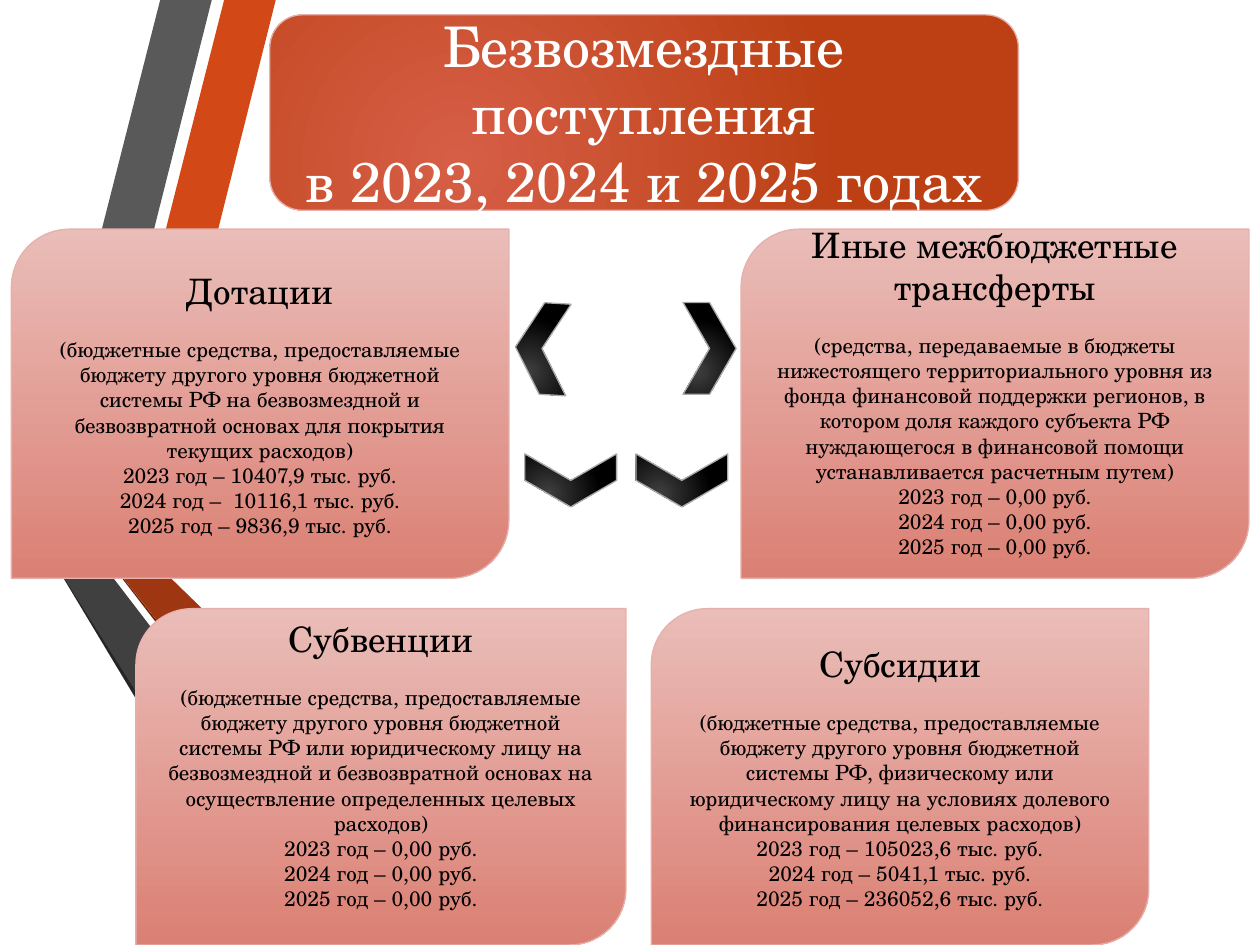
from dataclasses import dataclass

from lxml import etree
from pptx import Presentation
from pptx.dml.color import RGBColor
from pptx.enum.shapes import MSO_SHAPE
from pptx.enum.text import MSO_ANCHOR, PP_ALIGN
from pptx.oxml.ns import qn
from pptx.shapes.autoshape import Shape
from pptx.slide import Slide
from pptx.util import Cm, Pt


@dataclass(frozen=True)
class Theme:
    font: str = "TeX Gyre Schola"
    title_size: int = 32
    heading_size: int = 20
    body_size: int = 12
    blank_line: float = 14.4
    outline_width: float = 0.75
    title_text: str = "FFFFFF"
    card_text: str = "000000"
    title_fill: tuple[str, str] = ("D65E46", "BC4014")
    card_fill: tuple[str, str] = ("EABDB8", "DB8074")
    chevron_fill: tuple[str, str] = ("404040", "000000")
    panel_outline: str = "E6B1AC"
    chevron_outline: str = "ABABAB"
    orange: str = "D34817"
    orange_shade: str = "9E3611"
    orange_edge: str = "69240C"
    grey: str = "595959"
    grey_shade: str = "404040"
    grey_edge: str = "262626"


@dataclass(frozen=True)
class Box:
    left: float
    top: float
    width: float
    height: float


@dataclass(frozen=True)
class Ribbon:
    color: str
    points: tuple[tuple[float, float], ...]


@dataclass(frozen=True)
class Card:
    box: Box
    heading: str
    meaning: str
    amounts: tuple[str, str, str]
    raised: bool = False


@dataclass(frozen=True)
class Chevron:
    left: float
    top: float
    rotation: float


THEME = Theme()
SLIDE_WIDTH, SLIDE_HEIGHT = 25.4, 19.05
UPPER_TOP, UPPER_HEIGHT = 4.62, 7.04
LOWER_TOP, LOWER_HEIGHT = 12.27, 6.78
CHEVRON_WIDTH, CHEVRON_HEIGHT = 1.07, 1.85
SIDE_TOP, DOWN_TOP = 6.1, 8.76
NO_MONEY = "0,00 руб."

TITLE_BOX = Box(5.44, 0.3, 15.09, 3.94)
TITLE = ("Безвозмездные поступления", "в 2023, 2024 и 2025 годах")

RIBBONS = (
    Ribbon(THEME.orange, ((1.78, 10.77), (2.79, 11.02), (5.56, 0), (4.52, 0))),
    Ribbon(THEME.grey, ((4.27, 0), (3.23, 0), (0.56, 10.49), (1.57, 10.72))),
    Ribbon(THEME.grey_edge, ((0.58, 10.49), (5.72, SLIDE_HEIGHT), (5.97, SLIDE_HEIGHT))),
    Ribbon(THEME.orange_edge, ((8.38, SLIDE_HEIGHT), (1.8, 10.8), (8.15, SLIDE_HEIGHT))),
    Ribbon(THEME.orange_shade, ((1.78, 10.77), (8.38, SLIDE_HEIGHT),
                                (11.05, SLIDE_HEIGHT), (2.79, 11.02))),
    Ribbon(THEME.grey_shade, ((7.95, SLIDE_HEIGHT), (1.57, 10.72),
                              (0.56, 10.49), (5.97, SLIDE_HEIGHT))),
)

CARDS = (
    Card(Box(0.23, UPPER_TOP, 10.03, UPPER_HEIGHT), "Дотации",
         "(бюджетные средства, предоставляемые бюджету другого уровня бюджетной системы РФ "
         "на безвозмездной и безвозвратной основах для покрытия текущих расходов)",
         ("10407,9 тыс. руб.", " 10116,1 тыс. руб.", "9836,9 тыс. руб.")),
    Card(Box(2.74, LOWER_TOP, 9.88, LOWER_HEIGHT), "Субвенции",
         "(бюджетные средства, предоставляемые бюджету другого уровня бюджетной системы РФ "
         "или юридическому лицу на безвозмездной и безвозвратной основах на осуществление "
         "определенных целевых расходов)",
         (NO_MONEY, NO_MONEY, NO_MONEY), raised=True),
    Card(Box(13.13, LOWER_TOP, 10.03, LOWER_HEIGHT), "Субсидии",
         "(бюджетные средства, предоставляемые бюджету другого уровня бюджетной системы РФ, "
         "физическому или юридическому лицу на условиях долевого финансирования целевых "
         "расходов)",
         ("105023,6 тыс. руб.", "5041,1 тыс. руб.", "236052,6 тыс. руб.")),
    Card(Box(14.94, UPPER_TOP, 10.24, UPPER_HEIGHT), "Иные межбюджетные трансферты",
         "(средства, передаваемые в бюджеты нижестоящего территориального уровня из фонда "
         "финансовой поддержки регионов, в котором доля каждого субъекта РФ нуждающегося "
         "в финансовой помощи устанавливается расчетным путем)",
         (NO_MONEY, NO_MONEY, NO_MONEY), raised=True),
)

CHEVRONS = (
    Chevron(13.77, SIDE_TOP, 0),
    Chevron(13.21, DOWN_TOP, 90),
    Chevron(10.97, DOWN_TOP, 90),
    Chevron(10.39, SIDE_TOP, 183.4),
)


def draw_ribbon(slide: Slide, ribbon: Ribbon) -> None:
    start, *rest = [(Cm(x), Cm(y)) for x, y in ribbon.points]
    builder = slide.shapes.build_freeform(*start)
    builder.add_line_segments(rest)
    band = builder.convert_to_shape()
    band.shadow.inherit = False
    band.fill.solid()
    band.fill.fore_color.rgb = RGBColor.from_string(ribbon.color)
    band.line.fill.background()


def draw_panel(slide: Slide, preset: MSO_SHAPE, box: Box, colors: tuple[str, str],
               outline: str, radial: bool) -> Shape:
    panel = slide.shapes.add_shape(
        preset, Cm(box.left), Cm(box.top), Cm(box.width), Cm(box.height))
    panel.shadow.inherit = False
    panel.line.color.rgb = RGBColor.from_string(outline)
    panel.line.width = Pt(THEME.outline_width)
    panel.fill.gradient()
    panel.fill.gradient_angle = 270
    for stop, color in zip(panel.fill.gradient_stops, colors):
        stop.color.rgb = RGBColor.from_string(color)
    if radial:
        gradient = panel._element.spPr.find(qn("a:gradFill"))
        linear = gradient.find(qn("a:lin"))
        circle = etree.Element(qn("a:path"), {"path": "circle"})
        etree.SubElement(circle, qn("a:fillToRect"),
                         {"l": "50000", "t": "100000", "r": "100000", "b": "50000"})
        gradient.replace(linear, circle)
    return panel


def write_lines(panel: Shape, lines: tuple[str, ...], sizes: list[int], color: str) -> None:
    frame = panel.text_frame
    frame.word_wrap = True
    frame.vertical_anchor = MSO_ANCHOR.MIDDLE
    frame.text = "\n".join(lines)
    for paragraph, size in zip(frame.paragraphs, sizes):
        paragraph.alignment = PP_ALIGN.CENTER
        paragraph.font.name = THEME.font
        paragraph.font.size = Pt(size)
        paragraph.font.color.rgb = RGBColor.from_string(color)


def draw_title(slide: Slide) -> None:
    banner = draw_panel(slide, MSO_SHAPE.ROUNDED_RECTANGLE, TITLE_BOX,
                        THEME.title_fill, THEME.panel_outline, radial=True)
    write_lines(banner, TITLE, [THEME.title_size] * len(TITLE), THEME.title_text)


def draw_card(slide: Slide, card: Card) -> None:
    panel = draw_panel(slide, MSO_SHAPE.ROUND_2_DIAG_RECTANGLE, card.box,
                       THEME.card_fill, THEME.panel_outline, radial=False)
    amounts = [f"{year} год – {amount}" for year, amount in enumerate(card.amounts, 2023)]
    lines = (card.heading, card.meaning, *amounts)
    sizes = [THEME.heading_size] + [THEME.body_size] * (len(lines) - 1)
    write_lines(panel, lines, sizes, THEME.card_text)
    panel.text_frame.paragraphs[0].space_after = Pt(THEME.blank_line)
    if card.raised:
        panel.text_frame.margin_bottom += Pt(THEME.blank_line)


def draw_chevron(slide: Slide, chevron: Chevron) -> None:
    box = Box(chevron.left, chevron.top, CHEVRON_WIDTH, CHEVRON_HEIGHT)
    arrow = draw_panel(slide, MSO_SHAPE.CHEVRON, box,
                       THEME.chevron_fill, THEME.chevron_outline, radial=True)
    arrow.rotation = chevron.rotation


def main() -> None:
    """Build the slide on non-repayable budget receipts for 2023 to 2025."""
    deck = Presentation()
    deck.slide_width, deck.slide_height = Cm(SLIDE_WIDTH), Cm(SLIDE_HEIGHT)
    slide = deck.slides.add_slide(deck.slide_layouts[6])
    for ribbon in RIBBONS:
        draw_ribbon(slide, ribbon)
    draw_title(slide)
    for card in CARDS:
        draw_card(slide, card)
    for chevron in CHEVRONS:
        draw_chevron(slide, chevron)
    deck.save("out.pptx")


if __name__ == "__main__":
    main()
